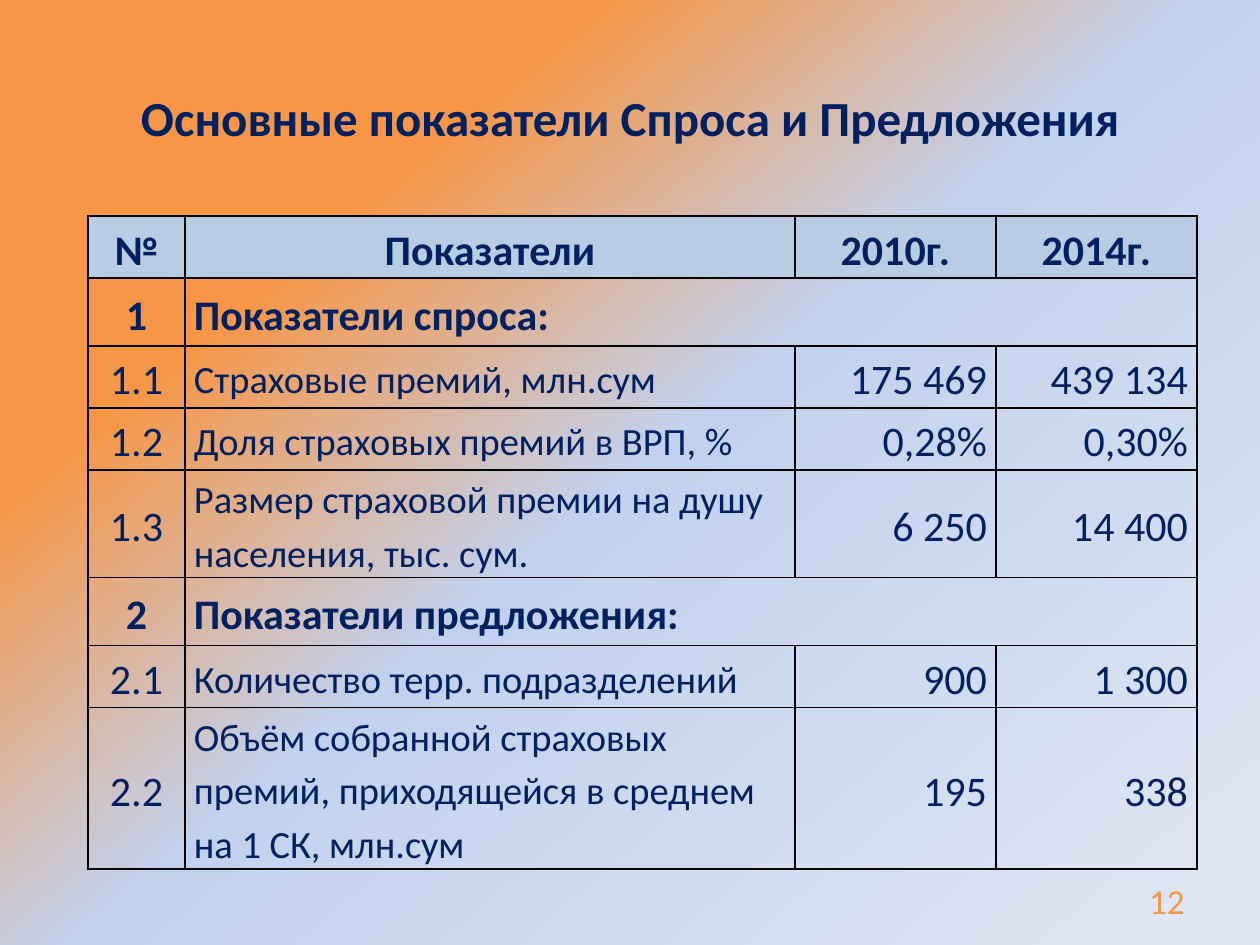
from dataclasses import dataclass

from lxml.etree import SubElement
from pptx import Presentation
from pptx.dml.color import RGBColor as RGB
from pptx.enum.text import MSO_ANCHOR as ANCHOR, PP_ALIGN as ALIGN
from pptx.oxml.ns import qn
from pptx.util import Pt

PX = 914400 // 126  # EMU per px


@dataclass(frozen=True)
class Theme:
    font: str = "Calibri"
    ink: str = "002060"
    accent: str = "F79646"
    header: str = "B8CCE4"
    border: str = "000000"
    gradient: tuple = ((25, "F79646"), (50, "C2D1ED"), (100, "E1E8F5"))
    title: int = 28
    body: int = 24
    label: int = 22
    number: int = 20


T = Theme()
TITLE = "Основные показатели Спроса и Предложения"
PAGE = "12"
HEADER = ("№", "Показатели", "2010г.", "2014г.")
# A row with two values is a section heading that spans the last three columns.
ROWS = [
    HEADER,
    ("1", "Показатели спроса:"),
    ("1.1", "Страховые премий, млн.сум", "175 469", "439 134"),
    ("1.2", "Доля страховых премий в ВРП, %", "0,28%", "0,30%"),
    ("1.3", "Размер страховой премии на душу населения, тыс. сум.", "6 250", "14 400"),
    ("2", "Показатели предложения:"),
    ("2.1", "Количество терр. подразделений", "900", "1 300"),
    ("2.2", "Объём собранной страховых премий, приходящейся в среднем на 1 СК, млн.сум",
     "195", "338"),
]
COL_WIDTHS = (97, 610, 201, 201)
ROW_HEIGHTS = (62, 68, 62, 62, 107, 68, 62, 161)
COL_ALIGNS = (ALIGN.CENTER, ALIGN.LEFT, ALIGN.RIGHT, ALIGN.RIGHT)


def px(*values):
    return [v * PX for v in values]


def write(tf, text, size, color, align, bold=False):
    tf.text = text
    p = tf.paragraphs[0]
    p.alignment = align
    font = p.runs[0].font
    font.name, font.size, font.bold = T.font, Pt(size), bold
    font.color.rgb = RGB.from_string(color)
    return p


def add_text(s, box, text, size, color, align, bold=False):
    tf = s.shapes.add_textbox(*px(*box)).text_frame
    tf.word_wrap = True
    tf.vertical_anchor = ANCHOR.MIDDLE
    write(tf, text, size, color, align, bold)


def add_color(parent, color):
    SubElement(parent, qn("a:srgbClr"), val=color)


def set_background(s):
    fill = s.background.fill
    fill.gradient()
    fill.gradient_angle = 310  # counter-clockwise
    stops = s.element.find(".//" + qn("a:gsLst"))
    for stop in list(stops):
        stops.remove(stop)
    for percent, color in T.gradient:
        add_color(SubElement(stops, qn("a:gs"), pos=str(percent * 1000)), color)


def set_borders(cell):
    """Put the four lines ahead of the cell fill, as the schema orders them."""
    props = cell._tc.get_or_add_tcPr()
    for i, side in enumerate(("a:lnL", "a:lnR", "a:lnT", "a:lnB")):
        line = SubElement(props, qn(side), w=str(Pt(1)))
        add_color(SubElement(line, qn("a:solidFill")), T.border)
        props.insert(i, line)


def format_cell(cell, text, col, is_header, is_section):
    cell.margin_left = cell.margin_right = 9 * PX
    cell.margin_top = cell.margin_bottom = 0
    cell.vertical_anchor = ANCHOR.MIDDLE
    is_label = col == 1 and not (is_header or is_section)
    p = write(cell.text_frame, text, T.label if is_label else T.body, T.ink,
              ALIGN.CENTER if is_header else COL_ALIGNS[col], is_header or is_section)
    p.line_spacing = 1.15


def add_indicators(s):
    box = px(88, 216, sum(COL_WIDTHS), sum(ROW_HEIGHTS))
    table = s.shapes.add_table(len(ROWS), len(HEADER), *box).table
    table.first_row = table.horz_banding = False
    for column, width in zip(table.columns, COL_WIDTHS):
        column.width = width * PX
    for row, height in zip(table.rows, ROW_HEIGHTS):
        row.height = height * PX

    for r, values in enumerate(ROWS):
        is_header, is_section = r == 0, len(values) == 2
        for c in range(len(HEADER)):
            cell = table.cell(r, c)
            if is_header:
                cell.fill.solid()
                cell.fill.fore_color.rgb = RGB.from_string(T.header)
            else:
                cell.fill.background()
            set_borders(cell)
            if c < len(values):
                format_cell(cell, values[c], c, is_header, is_section)
        if is_section:
            table.cell(r, 1).merge(table.cell(r, len(HEADER) - 1))


def main():
    prs = Presentation()
    prs.slide_width, prs.slide_height = px(1260, 945)
    s = prs.slides.add_slide(prs.slide_layouts[6])
    set_background(s)
    add_indicators(s)
    add_text(s, (63, 38, 1134, 158), TITLE, T.title, T.ink, ALIGN.CENTER, True)
    add_text(s, (903, 876, 294, 50), PAGE, T.number, T.accent, ALIGN.RIGHT)
    prs.save("out.pptx")


if __name__ == "__main__":
    main()
